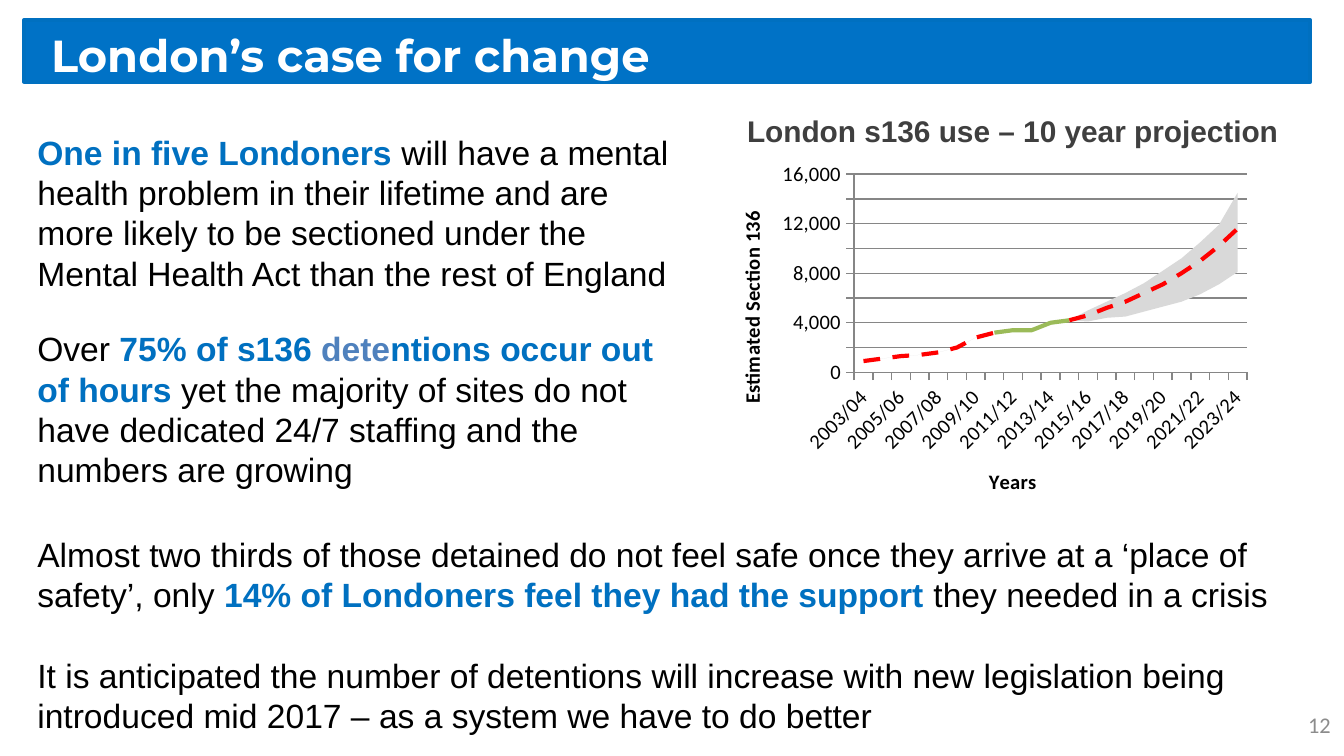
from dataclasses import dataclass

from lxml.etree import SubElement
from pptx import Presentation
from pptx.chart.data import CategoryChartData
from pptx.dml.color import RGBColor
from pptx.enum.chart import XL_CHART_TYPE, XL_MARKER_STYLE, XL_TICK_MARK
from pptx.enum.dml import MSO_LINE
from pptx.enum.shapes import MSO_SHAPE
from pptx.enum.text import MSO_ANCHOR, PP_ALIGN
from pptx.oxml import parse_xml
from pptx.oxml.ns import nsdecls, qn
from pptx.util import Inches, Pt


@dataclass(frozen=True)
class Theme:
    banner: str = "0072C6"
    accent: str = "0070C0"
    soft_accent: str = "4F81BD"
    ink: str = "000000"
    heading: str = "3F3F3F"
    muted: str = "8C8C8C"
    white: str = "FFFFFF"
    axis: str = "868686"
    band: str = "D9D9D9"
    projected: str = "FF0000"
    recorded: str = "9BBB59"
    body_font: str = "Arial"
    chart_font: str = "Calibri"
    title_font: str = "Montserrat"
    title_size: int = 24
    body_size: int = 18
    heading_size: int = 16
    number_size: int = 12
    chart_size: int = 11
    line_pitch: float = 21.6


THEME = Theme()

YEARS = [
    "2003/04", "2004/05", "2005/06", "2006/07", "2007/08", "2008/09", "2009/10",
    "2010/11", "2011/12", "2012/13", "2013/14", "2014/15", "2015/16", "2016/17",
    "2017/18", "2018/19", "2019/20", "2012/21", "2021/22", "2022/23", "2023/24",
]
EARLY = [900, 1100, 1300, 1400, 1600, 2000, 2800, 3200]
RECORDED = [3200, 3400, 3400, 4000, 4200]
LOW = [4100, 4400, 4500, 4900, 5300, 5700, 6300, 7100, 8100]
RANGE = [900, 1300, 1900, 2300, 2900, 3500, 4200, 4800, 6400]
CENTRAL = [4600, 5200, 5700, 6400, 7100, 8000, 9000, 10200, 11600]
SERIES = [
    EARLY + RECORDED[1:] + LOW,
    [None] * 12 + RANGE,
    EARLY + [None] * 3 + RECORDED[-1:] + CENTRAL,
    [None] * 7 + RECORDED + [None] * 9,
]

# Each paragraph is a list of (text, emphasis colour or None).
LEFT_TEXT = [
    [("One in five Londoners ", THEME.accent),
     ("will have a mental health problem in their lifetime and are more likely to be "
      "sectioned under the Mental Health Act than the rest of England", None)],
    [("Over ", None),
     ("75% of s136 ", THEME.accent),
     ("dete", THEME.soft_accent),
     ("ntions occur out of hours ", THEME.accent),
     ("yet the majority of sites do not have dedicated 24/7 staffing and the numbers "
      "are growing", None)],
]
LOWER_TEXT = [
    [("Almost two thirds of those detained do not feel safe once they arrive at a "
      "‘place of safety’, only ", None),
     ("14% of Londoners feel they had the support ", THEME.accent),
     ("they needed in a crisis", None)],
    [("It is anticipated the number of detentions will increase with new legislation "
      "being introduced mid 2017 – as a system we have to do better", None)],
]


def rgb(color):
    return RGBColor.from_string(color)


def style_font(font, name, size, color, bold=False):
    font.name = name
    font.size = Pt(size)
    font.color.rgb = rgb(color)
    font.bold = bold


def add_text_box(page, left, top, width, height):
    box = page.shapes.add_textbox(Inches(left), Inches(top), Inches(width), Inches(height))
    box.text_frame.word_wrap = True
    return box.text_frame


def add_label(page, place, text, align, font, size, color, bold=False):
    frame = add_text_box(page, *place)
    frame.text = text
    frame.vertical_anchor = MSO_ANCHOR.MIDDLE
    para = frame.paragraphs[0]
    para.alignment = align
    style_font(para.runs[0].font, font, size, color, bold)


def add_rich_text(page, place, paragraphs, gap):
    """Add paragraphs with coloured bold emphasis, `gap` points apart."""
    frame = add_text_box(page, *place)
    for index, spans in enumerate(paragraphs):
        para = frame.add_paragraph() if index else frame.paragraphs[0]
        para.line_spacing = Pt(THEME.line_pitch)
        para.space_before = Pt(gap if index else 0)
        for text, emphasis in spans:
            span = para.add_run()
            span.text = text
            style_font(span.font, THEME.body_font, THEME.body_size,
                       emphasis or THEME.ink, emphasis is not None)


def add_banner(page, text):
    banner = page.shapes.add_shape(
        MSO_SHAPE.RECTANGLE, Inches(0.18), Inches(0.15), Inches(9.57), Inches(0.46))
    banner.shadow.inherit = False
    banner.fill.solid()
    banner.fill.fore_color.rgb = rgb(THEME.banner)
    banner.line.color.rgb = rgb(THEME.accent)
    banner.line.width = Pt(2)
    frame = banner.text_frame
    frame.text = text
    frame.vertical_anchor = MSO_ANCHOR.MIDDLE
    frame.margin_left = Inches(0.2)
    frame.margin_top, frame.margin_bottom = Inches(0.05), 0
    para = frame.paragraphs[0]
    para.alignment = PP_ALIGN.LEFT
    style_font(para.runs[0].font, THEME.title_font, THEME.title_size, THEME.white, True)


def move_to_line_plot(chart, first):
    """Turn the series from index `first` on into lines on the same axes."""
    area = chart.element.xpath(".//c:areaChart")[0]
    line = parse_xml(f'<c:lineChart {nsdecls("c")}><c:grouping val="standard"/>'
                     '<c:varyColors val="0"/></c:lineChart>')
    for series in area.findall(qn("c:ser"))[first:]:
        line.append(series)
    SubElement(line, qn("c:marker")).set("val", "1")
    for axis_id in area.findall(qn("c:axId")):
        SubElement(line, qn("c:axId")).set("val", axis_id.get("val"))
    area.addnext(line)


def set_layout(parent, after, **fractions):
    """Place a chart part by fractions of the chart; `after` is the tag before it."""
    for old in parent.findall(qn("c:layout")):
        parent.remove(old)
    inner = '<c:layoutTarget val="inner"/>' if "w" in fractions else ""
    modes = "".join(f'<c:{key}Mode val="edge"/>' for key in "xy")
    values = "".join(f'<c:{key} val="{value}"/>' for key, value in fractions.items())
    layout = parse_xml(f'<c:layout {nsdecls("c")}><c:manualLayout>{inner}{modes}{values}'
                       '</c:manualLayout></c:layout>')
    previous = parent.find(qn(after)) if after else None
    if previous is None:
        parent.insert(0, layout)
    else:
        previous.addnext(layout)


def style_axis(axis, title):
    axis.has_title = True
    axis.axis_title.text_frame.text = title
    span = axis.axis_title.text_frame.paragraphs[0].runs[0]
    style_font(span.font, THEME.chart_font, THEME.chart_size, THEME.ink, True)
    style_font(axis.tick_labels.font, THEME.chart_font, THEME.chart_size, THEME.ink)
    axis.major_tick_mark = XL_TICK_MARK.OUTSIDE
    axis.minor_tick_mark = XL_TICK_MARK.NONE
    axis.format.line.color.rgb = rgb(THEME.axis)


def add_projection_chart(page):
    data = CategoryChartData()
    data.categories = YEARS
    for number, values in enumerate(SERIES, 1):
        data.add_series(f"Series {number}", values)
    chart = page.shapes.add_chart(
        XL_CHART_TYPE.AREA_STACKED, Inches(5.3), Inches(1.16), Inches(4.06), Inches(2.73),
        data).chart
    chart.has_title = chart.has_legend = False
    style_font(chart.font, THEME.chart_font, THEME.chart_size, THEME.ink)
    move_to_line_plot(chart, 2)

    areas, lines = chart.plots
    areas.vary_by_categories = False
    base, band = areas.series
    base.format.fill.background()
    band.format.fill.solid()
    band.format.fill.fore_color.rgb = rgb(THEME.band)
    for series, color in zip(lines.series, (THEME.projected, THEME.recorded)):
        series.smooth = False
        series.marker.style = XL_MARKER_STYLE.NONE
        series.format.line.color.rgb = rgb(color)
        series.format.line.width = Pt(2.25)
    lines.series[0].format.line.dash_style = MSO_LINE.DASH

    years, values = chart.category_axis, chart.value_axis
    style_axis(years, "Years")
    style_axis(values, "Estimated Section 136")
    years.has_major_gridlines = False
    values.minimum_scale, values.maximum_scale, values.major_unit = 0, 16000, 2000
    values.tick_labels.number_format = "#,##0"
    values.tick_labels.number_format_is_linked = False
    values.has_major_gridlines = True
    values.major_gridlines.format.line.color.rgb = rgb(THEME.axis)

    root = chart.element
    root.xpath(".//c:catAx/c:txPr/a:bodyPr")[0].set("rot", "-2700000")
    root.xpath(".//c:valAx/c:title//a:bodyPr")[0].set("rot", "-5400000")
    for crossing in root.xpath(".//c:valAx/c:crossBetween"):
        crossing.set("val", "between")
    for blanks in root.xpath(".//c:dispBlanksAs"):
        blanks.set("val", "gap")
    set_layout(root.xpath(".//c:plotArea")[0], None, x=0.26, y=0.05, w=0.72, h=0.54)
    set_layout(root.xpath(".//c:catAx/c:title")[0], "c:tx", x=0.5, y=0.84)
    set_layout(root.xpath(".//c:valAx/c:title")[0], "c:tx", x=0.04, y=0.14)


def main():
    deck = Presentation()
    deck.slide_width = Inches(10)
    deck.slide_height = deck.slide_width * 9 // 16
    page = deck.slides.add_slide(deck.slide_layouts[6])
    add_rich_text(page, (0.18, 0.93, 4.94, 2.99), LEFT_TEXT, gap=19)
    add_label(page, (7.67, 5.24, 2.33, 0.3), "12", PP_ALIGN.RIGHT,
              THEME.chart_font, THEME.number_size, THEME.muted)
    add_banner(page, "London’s case for change")
    add_projection_chart(page)
    add_label(page, (5.39, 0.79, 4.29, 0.37), "London s136 use – 10 year projection",
              PP_ALIGN.CENTER, THEME.body_font, THEME.heading_size, THEME.heading, True)
    add_rich_text(page, (0.18, 3.92, 9.57, 1.62), LOWER_TEXT, gap=THEME.line_pitch)
    deck.save("out.pptx")


if __name__ == "__main__":
    main()
